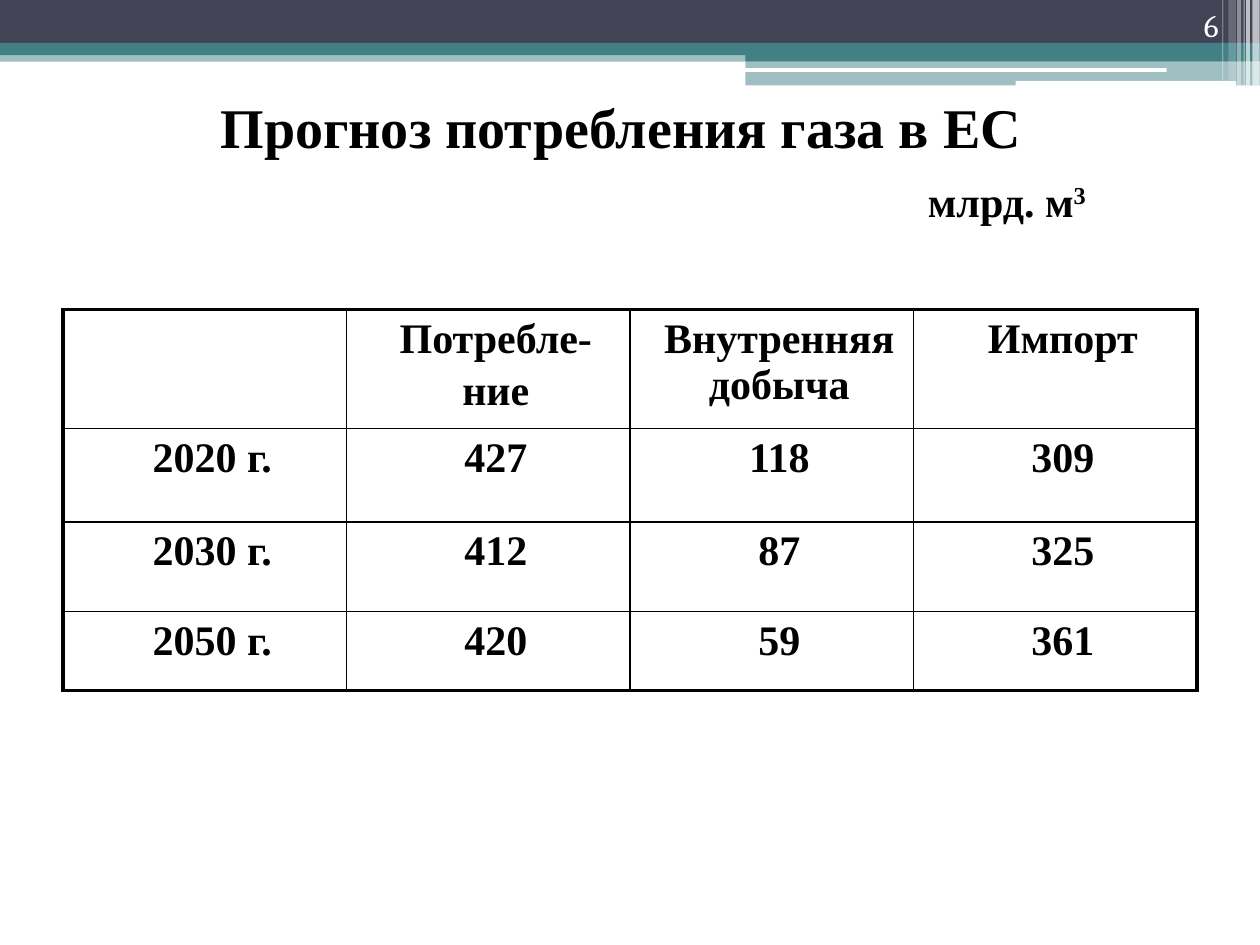
from pptx import Presentation
from pptx.dml.color import RGBColor
from pptx.enum.shapes import MSO_SHAPE as Shape
from pptx.enum.text import MSO_ANCHOR as Anchor, MSO_AUTO_SIZE as AutoSize, PP_ALIGN as Align
from pptx.oxml.ns import qn
from pptx.util import Pt
from lxml.etree import SubElement

SERIF = "Times New Roman"
TEAL, NAVY, WHITE, BLACK = "438086", "424456", "FFFFFF", "000000"
BANDS = [
    (0, 28.8, 720, 6.5, TEAL, 50),
    (0, 0, 720, 24.5, NAVY, 100),
    (0, 24.5, 720, 7, TEAL, 100),
    (426, 28, 294, 7, TEAL, 100),
    (426, 34.8, 294, 14, TEAL, 50),
]
ROUNDED_BARS = [(425.5, 38.9, 241.2, 2.2), (580.3, 46.3, 126, 2.9)]
STRIPES = [
    (715.7, 4.2, 49, 65),
    (712.1, 2.2, 49, 65),
    (710.6, 0.72, 49, 60),
    (707, 2.2, 49, 40),
    (702, 4.3, 46, 20),
    (698.4, 0.72, 46, 30),
]
ROWS = [
    ["", "Потребле-\nние", "Внутренняя добыча", "Импорт"],
    ["2020 г.", "427", "118", "309"],
    ["2030 г.", "412", "87", "325"],
    ["2050 г.", "420", "59", "361"],
]
ROW_HEIGHTS = [64.8, 53.5, 51, 45.4]


def rgb(value):
    return RGBColor.from_string(value)


def apply(target, values):
    for name, value in values.items():
        setattr(target, name, value)


def add_bar(page, left, top, width, height, color, opacity=100, kind=Shape.RECTANGLE):
    bar = page.shapes.add_shape(kind, Pt(left), Pt(top), Pt(width), Pt(height))
    bar.shadow.inherit = False
    bar.line.fill.background()
    bar.fill.solid()
    bar.fill.fore_color.rgb = rgb(color)
    if opacity < 100:
        tint = bar.fill._xPr.find(qn("a:solidFill"))[0]
        SubElement(tint, qn("a:alpha"), val=str(opacity * 1000))


def add_span(para, text, size, color=BLACK, font=SERIF, bold=True):
    span = para.add_run()
    span.text = text
    apply(span.font, {"size": Pt(size), "name": font, "bold": bold})
    span.font.color.rgb = rgb(color)
    return span


def add_header(page):
    for band in BANDS:
        add_bar(page, *band)
    for bar in ROUNDED_BARS:
        add_bar(page, *bar, WHITE, kind=Shape.ROUNDED_RECTANGLE)
    for left, width, height, opacity in STRIPES:
        add_bar(page, left, 0, width, height, WHITE, opacity)


def add_page_number(page, number):
    box = page.shapes.add_textbox(Pt(643.7), Pt(0), Pt(59.8), Pt(28.8))
    apply(box.text_frame, {"word_wrap": True, "vertical_anchor": Anchor.BOTTOM})
    para = box.text_frame.paragraphs[0]
    para.alignment = Align.RIGHT
    add_span(para, number, 18, WHITE, "Cambria", False)


def fill_title(page, heading, unit, power):
    title = page.shapes.title
    apply(title, {"left": Pt(31), "top": Pt(49), "width": Pt(648), "height": Pt(84)})
    frame = title.text_frame
    apply(frame, {"auto_size": AutoSize.NONE, "word_wrap": True, "vertical_anchor": Anchor.MIDDLE})
    para = frame.paragraphs[0]
    para.alignment = Align.CENTER
    add_span(para, heading, 32)
    para = frame.add_paragraph()
    apply(para, {"alignment": Align.LEFT, "space_before": Pt(9)})
    para._p.get_or_add_pPr().set("marL", str(Pt(492)))
    add_span(para, unit, 24)
    add_span(para, power, 24).font._element.set("baseline", "30000")


def add_border(cell, side, width):
    line = SubElement(cell._tc.get_or_add_tcPr(), qn(f"a:ln{side}"), w=str(Pt(width)))
    SubElement(SubElement(line, qn("a:solidFill")), qn("a:srgbClr"), val=BLACK)


def fill_cell(cell, text, outer_sides):
    frame = cell.text_frame
    for index, words in enumerate(text.split("\n")):
        para = frame.add_paragraph() if index else frame.paragraphs[0]
        apply(para, {"alignment": Align.CENTER, "space_before": Pt(3)})
        apply(para.font, {"size": Pt(24), "name": SERIF})
        para._p.get_or_add_pPr().set("marL", str(Pt(8.64)))
        if words:
            add_span(para, words, 24)
    for side in "LRTB":
        add_border(cell, side, 2.25 if side in outer_sides else 1)
    cell.fill.background()


def add_forecast_table(page):
    count = len(ROWS[0])
    frame = page.shapes.add_table(len(ROWS), count, Pt(36), Pt(177), Pt(648), Pt(sum(ROW_HEIGHTS)))
    table = frame.table
    apply(table, {"first_row": False, "horz_banding": False})
    for row, height in zip(table.rows, ROW_HEIGHTS):
        row.height = Pt(height)
    for r, texts in enumerate(ROWS):
        for c, text in enumerate(texts):
            edges = {"L": c == 0, "R": c == count - 1, "T": r == 0, "B": r == len(ROWS) - 1}
            fill_cell(table.cell(r, c), text, [side for side in edges if edges[side]])


def main():
    deck = Presentation()
    apply(deck, {"slide_width": Pt(720), "slide_height": Pt(540)})
    page = deck.slides.add_slide(deck.slide_layouts[5])
    add_header(page)
    add_page_number(page, "6")
    fill_title(page, "Прогноз потребления газа в ЕС", "млрд. м", "3")
    add_forecast_table(page)
    deck.save("out.pptx")


if __name__ == "__main__":
    main()
